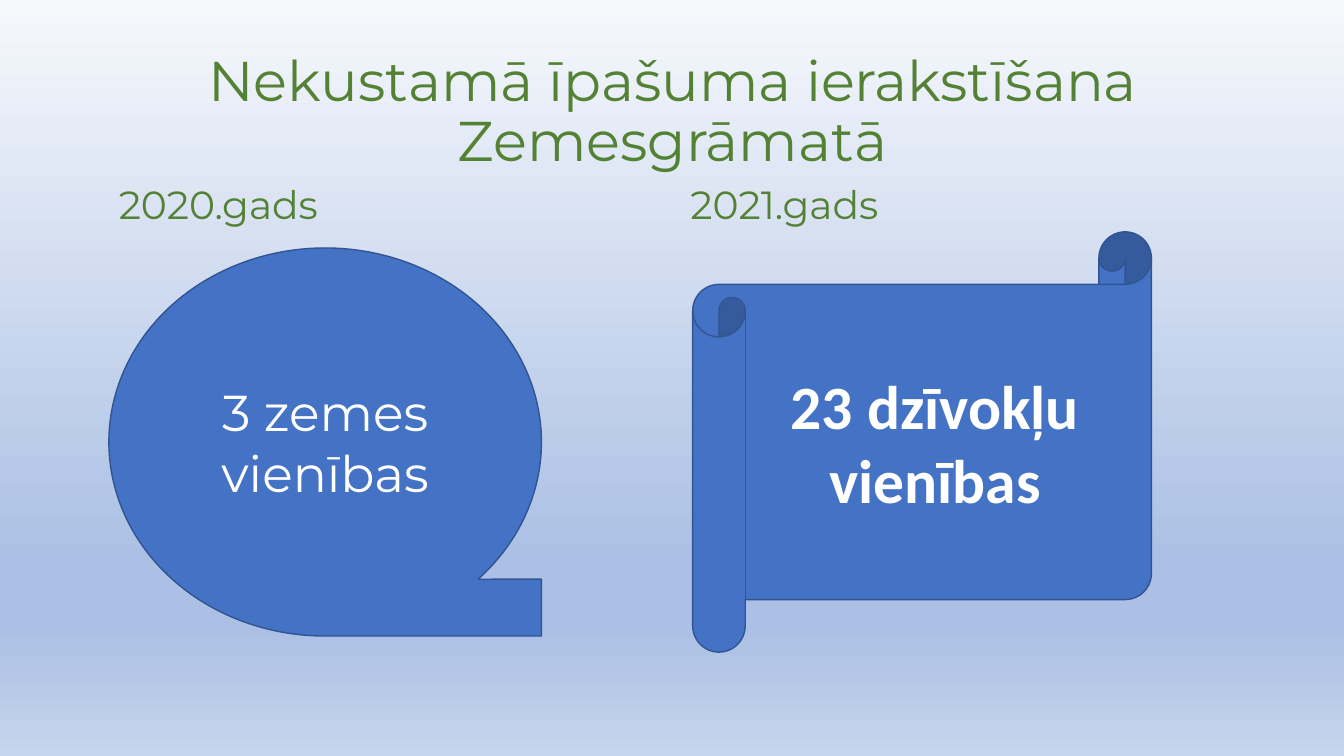
"""Slide comparing property units entered in the Land Register in 2020 and 2021."""
from dataclasses import dataclass

import pptx
import pptx.dml.color
import pptx.enum.shapes
import pptx.enum.text
import pptx.oxml.ns
import pptx.util
from lxml import etree

SHAPES = pptx.enum.shapes.MSO_SHAPE
ALIGN = pptx.enum.text.PP_ALIGN
ANCHOR = pptx.enum.text.MSO_ANCHOR

WIDTH, HEIGHT = 13.33, 7.5


@dataclass(frozen=True)
class Theme:
    green: str = "548235"
    blue: str = "4472C4"
    outline: str = "325491"
    white: str = "FFFFFF"
    sky: tuple = ((0, "F6F8FC"), (74, "ABC0E4"), (83, "ABC0E4"), (100, "C7D5ED"))
    heading: str = "Montserrat"
    strong: str = "Calibri"
    title_size: int = 40
    year_size: int = 28


THEME = Theme()

TITLE = "Nekustamā īpašuma ierakstīšana Zemesgrāmatā"
TITLE_BOX = (0.92, 0.4, 11.5, 1.45)
YEAR_TOP, YEAR_WIDTH, YEAR_HEIGHT = 1.79, 5.67, 0.6
YEARS = [
    {"year": "2020.gads", "left": 1.08, "units": "3 zemes vienības",
     "figure": SHAPES.FLOWCHART_SEQUENTIAL_ACCESS_STORAGE,
     "box": (1.08, 2.46, 4.29, 3.85), "font": THEME.heading, "size": 36, "bold": False},
    {"year": "2021.gads", "left": 6.75, "units": "23 dzīvokļu vienības",
     "figure": SHAPES.HORIZONTAL_SCROLL,
     "box": (6.87, 2.3, 4.55, 4.17), "font": THEME.strong, "size": 44, "bold": True},
]


def rgb(color):
    return pptx.dml.color.RGBColor.from_string(color)


def inches(box):
    return [pptx.util.Inches(length) for length in box]


def write(holder, words, font, size, color, align, anchor, bold=False, spacing=1.0):
    frame = holder.text_frame
    frame.word_wrap = True
    frame.vertical_anchor = anchor
    line = frame.paragraphs[0]
    line.text = words
    line.alignment = align
    line.line_spacing = spacing
    line.font.name = font
    line.font.size = pptx.util.Pt(size)
    line.font.bold = bold
    line.font.color.rgb = rgb(color)


def paint_sky(slide):
    fill = slide.background.fill
    fill.gradient()
    fill.gradient_angle = 270
    qn = pptx.oxml.ns.qn
    stops = next(slide.element.iter(qn("a:gsLst")))
    for stop in list(stops):
        stops.remove(stop)
    for share, color in THEME.sky:
        stop = etree.SubElement(stops, qn("a:gs"), pos=str(share * 1000))
        etree.SubElement(stop, qn("a:srgbClr"), val=color)


def add_year(slide, entry):
    label = slide.shapes.add_textbox(
        *inches((entry["left"], YEAR_TOP, YEAR_WIDTH, YEAR_HEIGHT)))
    write(label, entry["year"], THEME.heading, THEME.year_size, THEME.green,
          ALIGN.LEFT, ANCHOR.TOP, spacing=0.9)
    figure = slide.shapes.add_shape(entry["figure"], *inches(entry["box"]))
    figure.shadow.inherit = False
    figure.fill.solid()
    figure.fill.fore_color.rgb = rgb(THEME.blue)
    figure.line.color.rgb = rgb(THEME.outline)
    figure.line.width = pptx.util.Pt(1)
    write(figure, entry["units"], entry["font"], entry["size"], THEME.white,
          ALIGN.CENTER, ANCHOR.MIDDLE, entry["bold"])


def main():
    deck = pptx.Presentation()
    deck.slide_width, deck.slide_height = inches((WIDTH, HEIGHT))
    slide = deck.slides.add_slide(deck.slide_layouts[6])
    paint_sky(slide)
    title = slide.shapes.add_textbox(*inches(TITLE_BOX))
    write(title, TITLE, THEME.heading, THEME.title_size, THEME.green,
          ALIGN.CENTER, ANCHOR.MIDDLE, spacing=0.9)
    for entry in YEARS:
        add_year(slide, entry)
    deck.save("out.pptx")


if __name__ == "__main__":
    main()
